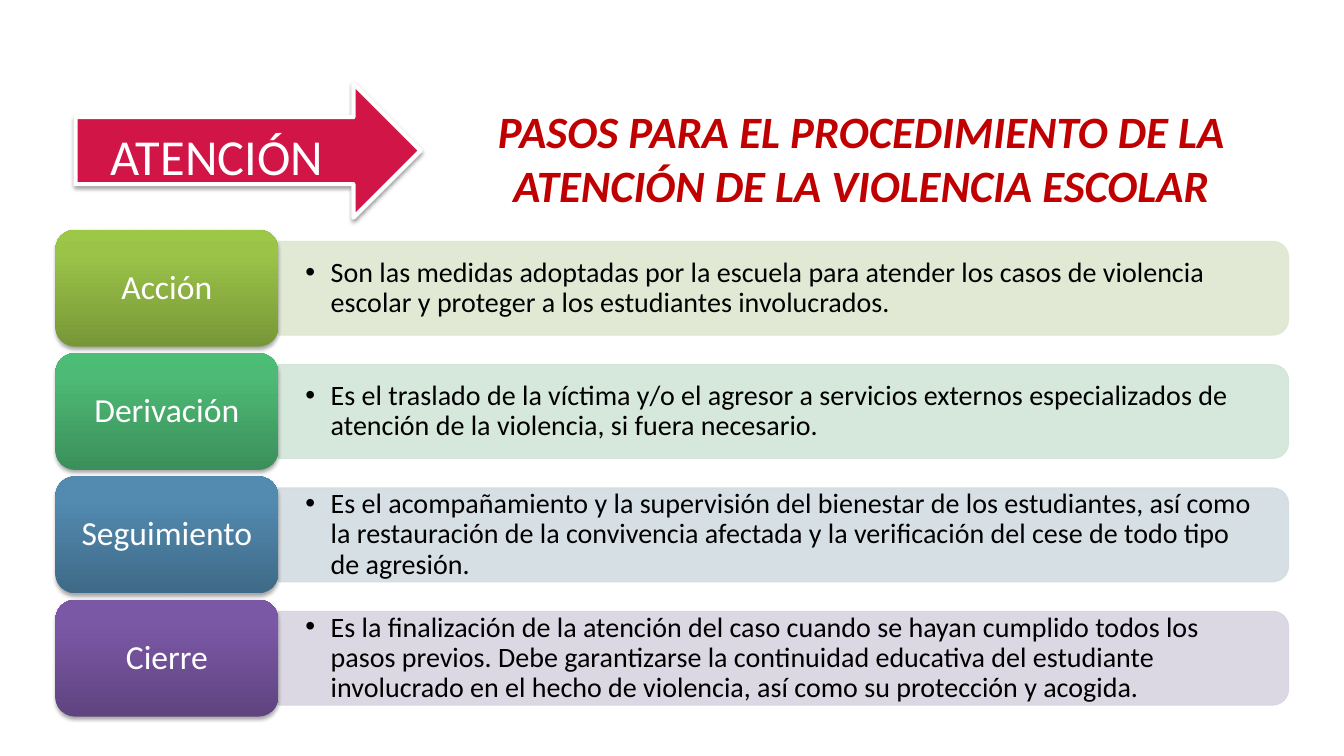
from lxml import etree
from pptx import Presentation
from pptx.dml.color import RGBColor
from pptx.enum import shapes, text
from pptx.oxml import ns, parse_xml
from pptx.util import Inches, Pt

# Content
TITLE = "PASOS PARA EL PROCEDIMIENTO DE LA ATENCIÓN DE LA VIOLENCIA ESCOLAR"
ARROW_LABEL = "ATENCIÓN"
STEPS = [  # name, explanation, bar colour, gradient from bottom to top
    ("Acción",
     "Son las medidas adoptadas por la escuela para atender los casos de violencia "
     "escolar y proteger a los estudiantes involucrados.",
     "DEE7D1", ("779737", "9BC348", "9DC746")),
    ("Derivación",
     "Es el traslado de la víctima y/o el agresor a servicios externos especializados "
     "de atención de la violencia, si fuera necesario.",
     "D2E5D9", ("3B8F5A", "4DBA75", "4BBD75")),
    ("Seguimiento",
     "Es el acompañamiento y la supervisión del bienestar de los estudiantes, así como "
     "la restauración de la convivencia afectada y la verificación del cese de todo "
     "tipo de agresión.",
     "D2DCE2", ("3F6A88", "528AB0", "518BB3")),
    ("Cierre",
     "Es la finalización de la atención del caso cuando se hayan cumplido todos los "
     "pasos previos. Debe garantizarse la continuidad educativa del estudiante "
     "involucrado en el hecho de violencia, así como su protección y acogida.",
     "D8D3E0", ("5F4480", "7B58A6", "7C57A8")),
]

THEME = {
    "font": "Calibri", "title": "C00000", "arrow": "D11546", "light": "FFFFFF",
    "dark": "000000", "title_size": 32, "arrow_size": 36, "name_size": 24,
    "body_size": 20, "bar_opacity": 90,
}

# Layout in inches
FIRST_TOP, LAST_TOP = 2.28, 5.95
NAME_LEFT, NAME_W, NAME_H = 0.55, 2.21, 1.16
BAR_W, BAR_H = 10.02, 0.93
BODY_W, BODY_H = 9.98, 0.84
PITCH = (LAST_TOP - FIRST_TOP) / (len(STEPS) - 1)
BAR_LEFT = NAME_LEFT + NAME_W

prs = Presentation()
prs.slide_width, prs.slide_height = Inches(13.33), Inches(7.5)
slide = prs.slides.add_slide(prs.slide_layouts[6])


def add_shape(kind, left, top, width, height):
    shape = slide.shapes.add_shape(kind, *map(Inches, (left, top, width, height)))
    shape.shadow.inherit = False
    return shape


def add_box(left, top, width, height, insets=(0.1, 0.05)):
    box = slide.shapes.add_textbox(*map(Inches, (left, top, width, height)))
    set_frame(box.text_frame, insets)
    return box.text_frame


def set_frame(frame, insets):
    frame.word_wrap = True
    frame.margin_left = frame.margin_right = Inches(insets[0])
    frame.margin_top = frame.margin_bottom = Inches(insets[1])


def write(frame, words, size, color, align=text.PP_ALIGN.LEFT, spacing=None):
    paragraph = frame.paragraphs[0]
    paragraph.alignment = align
    if spacing:
        paragraph.line_spacing = spacing
    run = paragraph.add_run()
    run.text = words
    run.font.name, run.font.size = THEME["font"], Pt(size)
    run.font.color.rgb = RGBColor.from_string(color)
    return run


def add_shadow(shape, opacity, blur, distance):
    effects = shape._element.spPr.find(ns.qn("a:effectLst"))
    effects.append(parse_xml(
        f'<a:outerShdw {ns.nsdecls("a")} blurRad="{Pt(blur)}" dist="{Pt(distance)}" '
        f'dir="5400000" rotWithShape="0"><a:srgbClr val="{THEME["dark"]}">'
        f'<a:alpha val="{opacity * 1000}"/></a:srgbClr></a:outerShdw>'))


def set_gradient(shape, colors):
    shape.fill.gradient()
    shape.fill.gradient_angle = 90
    stops = shape._element.spPr.find(ns.qn("a:gradFill")).find(ns.qn("a:gsLst"))
    for stop in list(stops):
        stops.remove(stop)
    for position, color in zip((0, 80, 100), colors):
        stop = etree.SubElement(stops, ns.qn("a:gs"), pos=str(position * 1000))
        etree.SubElement(stop, ns.qn("a:srgbClr"), val=color)


def set_bullet(paragraph, indent):
    props = paragraph._p.get_or_add_pPr()
    props.set("marL", str(Inches(indent)))
    props.set("indent", str(-Inches(indent)))
    etree.SubElement(props, ns.qn("a:buFont"), typeface="Arial")
    etree.SubElement(props, ns.qn("a:buChar"), char="•")


# Title
title = write(add_box(4.87, 1.03, 7.35, 0.9, (0, 0)), TITLE, THEME["title_size"],
              THEME["title"], text.PP_ALIGN.CENTER)
title.font.bold = title.font.italic = True

# Steps: bar, explanation and name block
for index, (name, explanation, bar_color, gradient) in enumerate(STEPS):
    top = FIRST_TOP + index * PITCH
    middle = top + NAME_H / 2

    # The bar stands upright and is turned so its round corners face right
    bar = add_shape(shapes.MSO_SHAPE.ROUND_2_SAME_RECTANGLE,
                    BAR_LEFT + (BAR_W - BAR_H) / 2, middle - BAR_W / 2, BAR_H, BAR_W)
    bar.rotation = 90
    bar.line.width = Pt(0.75)
    for paint in (bar.fill, bar.line.fill):
        paint.solid()
        paint.fore_color.rgb = RGBColor.from_string(bar_color)
    for color in bar._element.spPr.iter(ns.qn("a:srgbClr")):
        etree.SubElement(color, ns.qn("a:alpha"), val=str(THEME["bar_opacity"] * 1000))

    body = add_box(BAR_LEFT, middle - BODY_H / 2, BODY_W, BODY_H, (0.27, 0.14))
    body.vertical_anchor = text.MSO_ANCHOR.MIDDLE
    write(body, explanation, THEME["body_size"], THEME["dark"], spacing=0.9)
    set_bullet(body.paragraphs[0], 0.25)

    block = add_shape(shapes.MSO_SHAPE.ROUNDED_RECTANGLE, NAME_LEFT, top, NAME_W, NAME_H)
    set_gradient(block, gradient)
    block.line.fill.background()
    add_shadow(block, 35, 3.1, 1.8)
    set_frame(block.text_frame, (0.1, 0.05))
    block.text_frame.vertical_anchor = text.MSO_ANCHOR.MIDDLE
    write(block.text_frame, name, THEME["name_size"], THEME["light"],
          text.PP_ALIGN.CENTER, 0.9)

# Arrow and its label
arrow = add_shape(shapes.MSO_SHAPE.RIGHT_ARROW, 0.75, 0.83, 3.42, 1.33)
arrow.fill.solid()
arrow.fill.fore_color.rgb = RGBColor.from_string(THEME["arrow"])
arrow.line.color.rgb = RGBColor.from_string(THEME["light"])
arrow.line.width = Pt(3)
add_shadow(arrow, 38, 3.1, 1.6)
write(add_box(1, 1.19, 2.67, 0.71), ARROW_LABEL, THEME["arrow_size"], THEME["light"])

prs.save("out.pptx")
